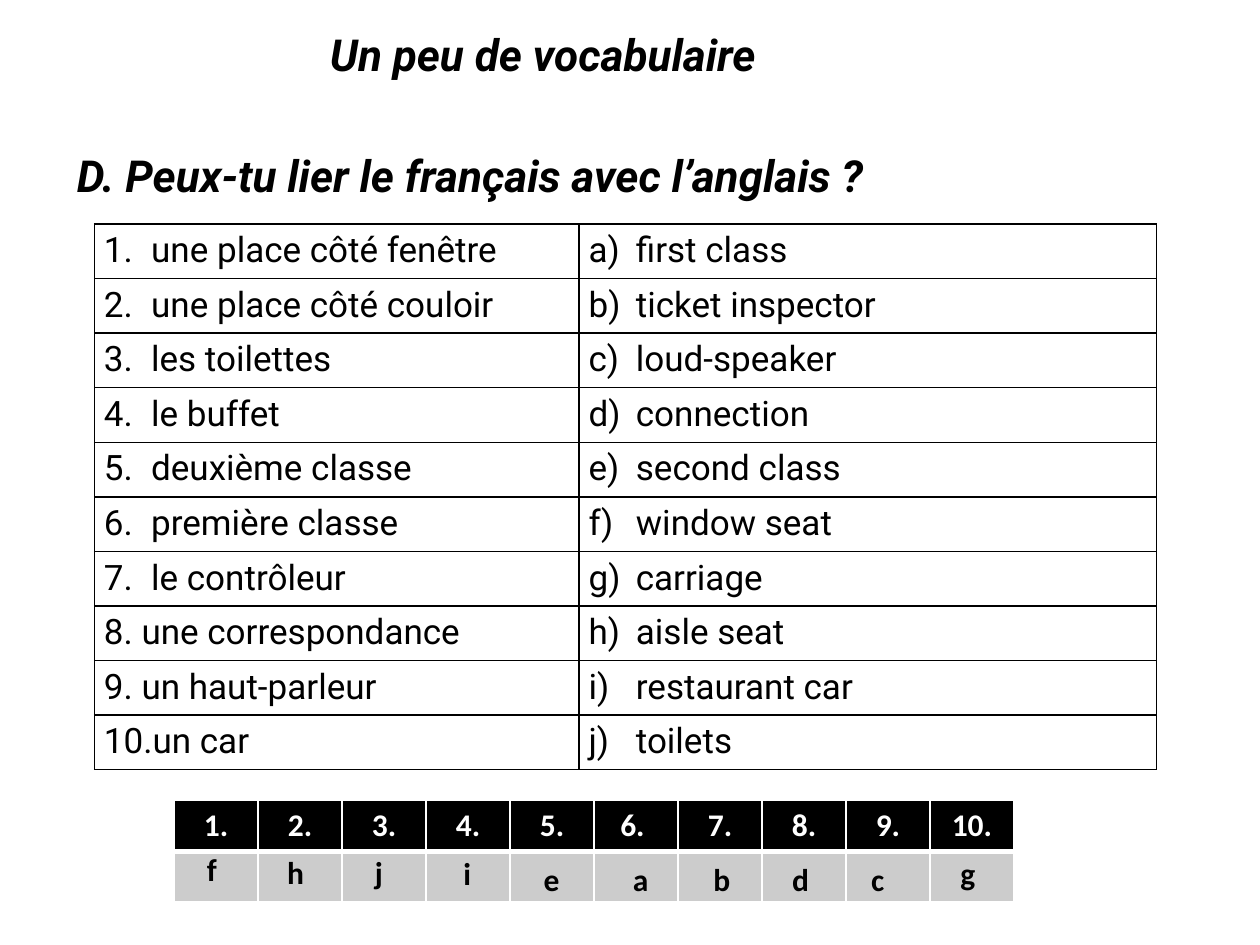
from pptx import Presentation
from pptx.dml.color import RGBColor
from pptx.enum.text import MSO_ANCHOR, PP_ALIGN
from pptx.oxml.ns import qn
from pptx.util import Pt
from lxml import etree

CENTER = PP_ALIGN.CENTER
LEFT = PP_ALIGN.LEFT
MIDDLE = MSO_ANCHOR.MIDDLE

COLORS = {"black": "000000", "white": "FFFFFF", "grey": "CCCCCC"}

VOCABULARY = [
    ("1.\tune place côté fenêtre", "a)\tfirst class"),
    ("2.\tune place côté couloir", "b)\tticket inspector"),
    ("3.\tles toilettes", "c)\tloud-speaker"),
    ("4.\tle buffet", "d)\tconnection"),
    ("5.\tdeuxième classe", "e)\tsecond class"),
    ("6.\tpremière classe", "f)\twindow seat"),
    ("7.\tle contrôleur", "g)\tcarriage"),
    ("8. une correspondance", "h)\taisle seat"),
    ("9. un haut-parleur", "i)\trestaurant car"),
    ("10.un car", "j)\ttoilets"),
]

ANSWERS = [
    ("f", 121, 482), ("h", 168.5, 484), ("j", 216.5, 484), ("i", 267, 484.5),
    ("e", 315, 488), ("a", 366, 488), ("b", 412, 488), ("d", 457, 488),
    ("c", 501.5, 488), ("g", 553, 484.5),
]


def rgb(name):
    return RGBColor.from_string(COLORS[name])


def style(p, font, size, color, bold=False, italic=False, align=LEFT):
    p.alignment = align
    p.font.name = font
    p.font.size = Pt(size)
    p.font.bold = bold
    p.font.italic = italic
    p.font.color.rgb = rgb(color)


def set_borders(cell, color, bottom=1):
    tc_pr = cell._tc.get_or_add_tcPr()
    for side, width in (("L", 1), ("R", 1), ("T", 1), ("B", bottom)):
        ln = etree.SubElement(tc_pr, qn(f"a:ln{side}"), w=str(Pt(width)))
        fill = etree.SubElement(ln, qn("a:solidFill"))
        etree.SubElement(fill, qn("a:srgbClr"), val=COLORS[color])


def set_hanging_tab(p, indent):
    p_pr = p._p.get_or_add_pPr()
    p_pr.set("marL", str(Pt(indent)))
    p_pr.set("indent", str(-Pt(indent)))
    tabs = etree.SubElement(p_pr, qn("a:tabLst"))
    etree.SubElement(tabs, qn("a:tab"), pos=str(Pt(indent)), algn="l")


def add_heading(slide, text, left, top, width, height):
    s = slide.shapes.add_textbox(Pt(left), Pt(top), Pt(width), Pt(height))
    tf = s.text_frame
    tf.word_wrap = True
    tf.vertical_anchor = MIDDLE
    tf.margin_left = tf.margin_right = tf.margin_top = tf.margin_bottom = 0
    p = tf.paragraphs[0]
    p.text = text
    style(p, "Roboto", 25.2, "black", bold=True, italic=True)


def add_vocabulary(slide, left, top, width, height):
    table = slide.shapes.add_table(
        len(VOCABULARY), 2, Pt(left), Pt(top), Pt(width), Pt(height)).table
    table.first_row = table.horz_banding = False
    french = 277
    table.columns[0].width = Pt(french)
    table.columns[1].width = Pt(width - french)
    for row, pair in enumerate(VOCABULARY):
        for col, text in enumerate(pair):
            cell = table.cell(row, col)
            cell.margin_left = cell.margin_right = Pt(5.4)
            cell.margin_top = cell.margin_bottom = 0
            set_borders(cell, "black")
            cell.fill.background()
            p = cell.text_frame.paragraphs[0]
            p.text = text
            p.line_spacing = 1.15
            set_hanging_tab(p, 27)
            style(p, "Roboto", 20, "black")


def add_answer_grid(slide, left, top, width, height):
    count = len(ANSWERS)
    table = slide.shapes.add_table(
        2, count, Pt(left), Pt(top), Pt(width), Pt(height)).table
    for col in range(count):
        head, blank = table.cell(0, col), table.cell(1, col)
        set_borders(head, "white", bottom=3)
        set_borders(blank, "white")
        for cell, color in ((head, "black"), (blank, "grey")):
            cell.fill.solid()
            cell.fill.fore_color.rgb = rgb(color)
        p = head.text_frame.paragraphs[0]
        p.text = "6. " if col == 5 else f"{col + 1}."
        style(p, "Calibri", 18, "white", bold=True, align=CENTER)


def add_answer(slide, letter, center, top, width=23, height=29):
    s = slide.shapes.add_textbox(
        Pt(center - width / 2), Pt(top), Pt(width), Pt(height))
    s.text_frame.word_wrap = False
    p = s.text_frame.paragraphs[0]
    p.text = letter
    style(p, "Calibri", 18, "black", bold=True, align=CENTER)


def main():
    prs = Presentation()
    prs.slide_width, prs.slide_height = Pt(720), Pt(540)
    slide = prs.slides.add_slide(prs.slide_layouts[6])
    add_heading(slide, "Un peu de vocabulaire", 188.5, 13, 480, 36)
    add_heading(slide, "D. Peux-tu lier le français avec l’anglais\u00a0?",
                44, 82, 640, 36)
    add_vocabulary(slide, 54, 128, 607, 312)
    add_answer_grid(slide, 99.5, 457.5, 480, 58)
    for letter, center, top in ANSWERS:
        add_answer(slide, letter, center, top)
    prs.save("out.pptx")


if __name__ == "__main__":
    main()
